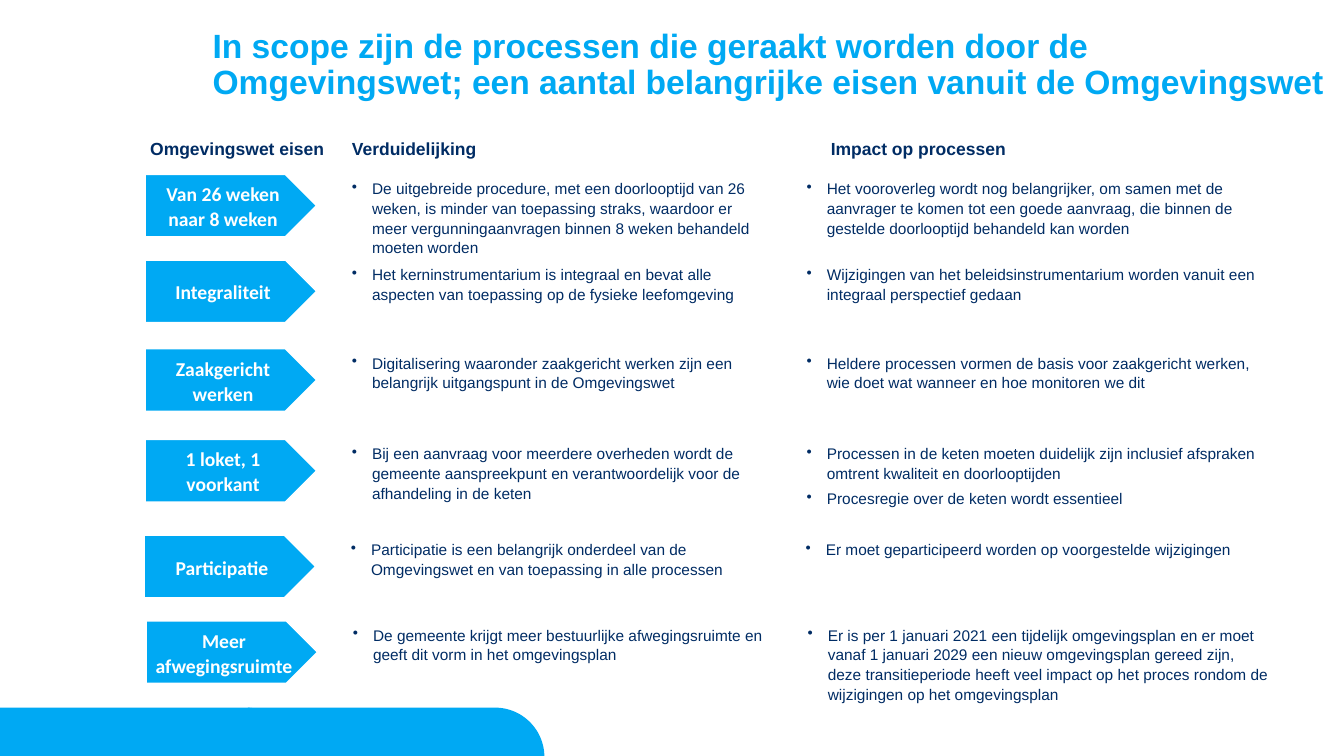
from math import cos, pi, sin

from lxml.etree import SubElement
from pptx import Presentation
from pptx.dml.color import RGBColor
from pptx.enum.shapes import MSO_SHAPE as Preset
from pptx.enum.text import MSO_ANCHOR as Anchor, MSO_AUTO_SIZE as AutoSize, PP_ALIGN as Align
from pptx.oxml.ns import qn
from pptx.util import Inches, Pt

COLORS = {"sky": "00A9F3", "navy": "002C64", "white": "FFFFFF"}

STYLES = {
    "title": {"color": "sky", "font": {"name": "Arial", "size": Pt(24), "bold": True},
              "para": {"line_spacing": 0.9}},
    "heading": {"color": "navy", "font": {"name": "Arial", "size": Pt(12.5), "bold": True},
                "para": {"line_spacing": 1.06}, "indent": 0.39},
    "label": {"color": "white", "font": {"name": "Calibri", "size": Pt(14), "bold": True},
              "para": {"line_spacing": 1.06, "alignment": Align.CENTER}},
    "bullet": {"color": "navy", "font": {"name": "Arial", "size": Pt(11), "bold": False},
               "para": {"line_spacing": 1.06, "level": 1}, "indent": 0.2, "gap": Pt(4), "mark": "•"},
}

TITLE = ("In scope zijn de processen die geraakt worden door de Omgevingswet; "
         "een aantal belangrijke eisen vanuit de Omgevingswet")

HEADINGS = [
    ("Omgevingswet eisen", 1.45, 1.83),
    ("Verduidelijking", 3.45, 2.95),
    ("Impact op processen", 8.2, 2.47),
]

LABEL_LEFT, DETAIL_LEFT, IMPACT_LEFT = 1.44, 3.45, 7.96

REQUIREMENTS = [
    {"top": 1.73, "shift": 0, "label": "Van 26 weken naar 8 weken",
     "detail": (0.85, ["De uitgebreide procedure, met een doorlooptijd van 26 weken, is minder van "
                       "toepassing straks, waardoor er meer vergunningaanvragen binnen 8 weken "
                       "behandeld moeten worden"]),
     "impact": (0.65, ["Het vooroverleg wordt nog belangrijker, om samen met de aanvrager te komen tot "
                       "een goede aanvraag, die binnen de gestelde doorlooptijd behandeld kan worden"])},
    {"top": 2.58, "shift": 0, "label": "Integraliteit",
     "detail": (0.46, ["Het kerninstrumentarium is integraal en bevat alle aspecten van toepassing op "
                       "de fysieke leefomgeving"]),
     "impact": (0.71, ["Wijzigingen van het beleidsinstrumentarium worden vanuit een integraal "
                       "perspectief gedaan"])},
    {"top": 3.46, "shift": 0, "label": "Zaakgericht werken",
     "detail": (0.47, ["Digitalisering waaronder zaakgericht werken zijn een belangrijk uitgangspunt "
                       "in de Omgevingswet"]),
     "impact": (0.47, ["Heldere processen vormen de basis voor zaakgericht werken, wie doet wat "
                       "wanneer en hoe monitoren we dit"])},
    {"top": 4.36, "shift": 0, "label": "1 loket, 1 voorkant",
     "detail": (0.67, ["Bij een aanvraag voor meerdere overheden wordt de gemeente aanspreekpunt en "
                       "verantwoordelijk voor de afhandeling in de keten"]),
     "impact": (0.71, ["Processen in de keten moeten duidelijk zijn inclusief afspraken omtrent "
                       "kwaliteit en doorlooptijden",
                       "Procesregie over de keten wordt essentieel"])},
    {"top": 5.31, "shift": -0.01, "label": "Participatie",
     "detail": (0.46, ["Participatie is een belangrijk onderdeel van de Omgevingswet en van toepassing "
                       "in alle processen"]),
     "impact": (0.26, ["Er moet geparticipeerd worden op voorgestelde wijzigingen"])},
    {"top": 6.16, "shift": 0.01, "label": "Meer afwegingsruimte",
     "detail": (0.46, ["De gemeente krijgt meer bestuurlijke afwegingsruimte en geeft dit vorm in het "
                       "omgevingsplan"]),
     "impact": (0.85, ["Er is per 1 januari 2021 een tijdelijk omgevingsplan en er moet vanaf 1 januari "
                       "2029 een nieuw omgevingsplan gereed zijn, deze transitieperiode heeft veel "
                       "impact op het proces rondom de wijzigingen op het omgevingsplan"])},
]


def rgb(name):
    """Return the named colour."""
    return RGBColor.from_string(COLORS[name])


def set_all(target, values):
    """Set every attribute in values on target."""
    for name, value in values.items():
        setattr(target, name, value)


def write(frame, texts, style, inset=0.04, **frame_format):
    """Fill a text frame with one paragraph per text."""
    sides = ("margin_left", "margin_top", "margin_right", "margin_bottom")
    set_all(frame, {"word_wrap": True, **dict.fromkeys(sides, Inches(inset)), **frame_format})
    for index, text in enumerate(texts):
        para = frame.add_paragraph() if index else frame.paragraphs[0]
        set_all(para, style["para"])
        if index:
            para.space_before = style["gap"]
        properties = para._p.get_or_add_pPr()
        if "indent" in style:
            indent = Inches(style["indent"])
            properties.set("marL", str(indent))
            properties.set("indent", str(-indent))
        if "mark" in style:
            SubElement(properties, qn("a:buChar"), char=style["mark"])
        span = para.add_run()
        span.text = text
        set_all(span.font, style["font"])
        span.font.color.rgb = rgb(style["color"])


def add_text(page, texts, style, left, top, width, height, **frame_format):
    """Add a text box in one of the styles."""
    box = page.shapes.add_textbox(*map(Inches, (left, top, width, height)))
    write(box.text_frame, texts, STYLES[style], **frame_format)


def add_label(page, text, left, top):
    """Add a pentagon arrow naming a requirement."""
    arrow = page.shapes.add_shape(Preset.PENTAGON, *map(Inches, (left, top, 1.7, 0.62)))
    arrow.shadow.inherit = False
    arrow.fill.solid()
    arrow.fill.fore_color.rgb = rgb("sky")
    arrow.line.color.rgb = rgb("white")
    arrow.line.width = Pt(1)
    write(arrow.text_frame, [text], STYLES["label"], vertical_anchor=Anchor.MIDDLE)


def add_footer_tab(page, left):
    """Add a footer band with a rounded top right corner."""
    width, radius, bottom, steps = 2.94, 0.49, 7.51, 24
    center = left + width - radius
    angles = [pi / 2 * (1 - step / steps) for step in range(steps + 1)]
    curve = [(center + radius * cos(angle), bottom - radius * sin(angle)) for angle in angles]
    outline = [(Inches(x), Inches(y)) for x, y in [(left, bottom - radius), *curve]]
    builder = page.shapes.build_freeform(Inches(left), Inches(bottom))
    builder.add_line_segments(outline, close=True)
    tab = builder.convert_to_shape()
    tab.shadow.inherit = False
    tab.fill.solid()
    tab.fill.fore_color.rgb = rgb("sky")
    tab.line.fill.background()


def add_requirement(page, row):
    """Add one row: label, explanation and impact."""
    top, shift = row["top"], row["shift"]
    add_label(page, row["label"], LABEL_LEFT + shift, top)
    for key, left, width in (("detail", DETAIL_LEFT, 4.2), ("impact", IMPACT_LEFT, 4.68)):
        height, texts = row[key]
        add_text(page, texts, "bullet", left + shift, top, width, height,
                 auto_size=AutoSize.SHAPE_TO_FIT_TEXT)


def main():
    """Build the slide and save it."""
    deck = Presentation()
    deck.slide_width, deck.slide_height = Inches(13.33), Inches(7.5)
    page = deck.slides.add_slide(deck.slide_layouts[6])
    for left in (-0.01, 2.46):
        add_footer_tab(page, left)
    add_text(page, [TITLE], "title", 2.01, 0.24, 11.32, 0.78, margin_left=Inches(0.1),
             margin_right=Inches(0.1), margin_top=Inches(0.05))
    for text, left, width in HEADINGS:
        add_text(page, [text], "heading", left, 1.32, width, 0.31,
                 auto_size=AutoSize.SHAPE_TO_FIT_TEXT)
    for row in REQUIREMENTS:
        add_requirement(page, row)
    deck.save("out.pptx")


if __name__ == "__main__":
    main()
